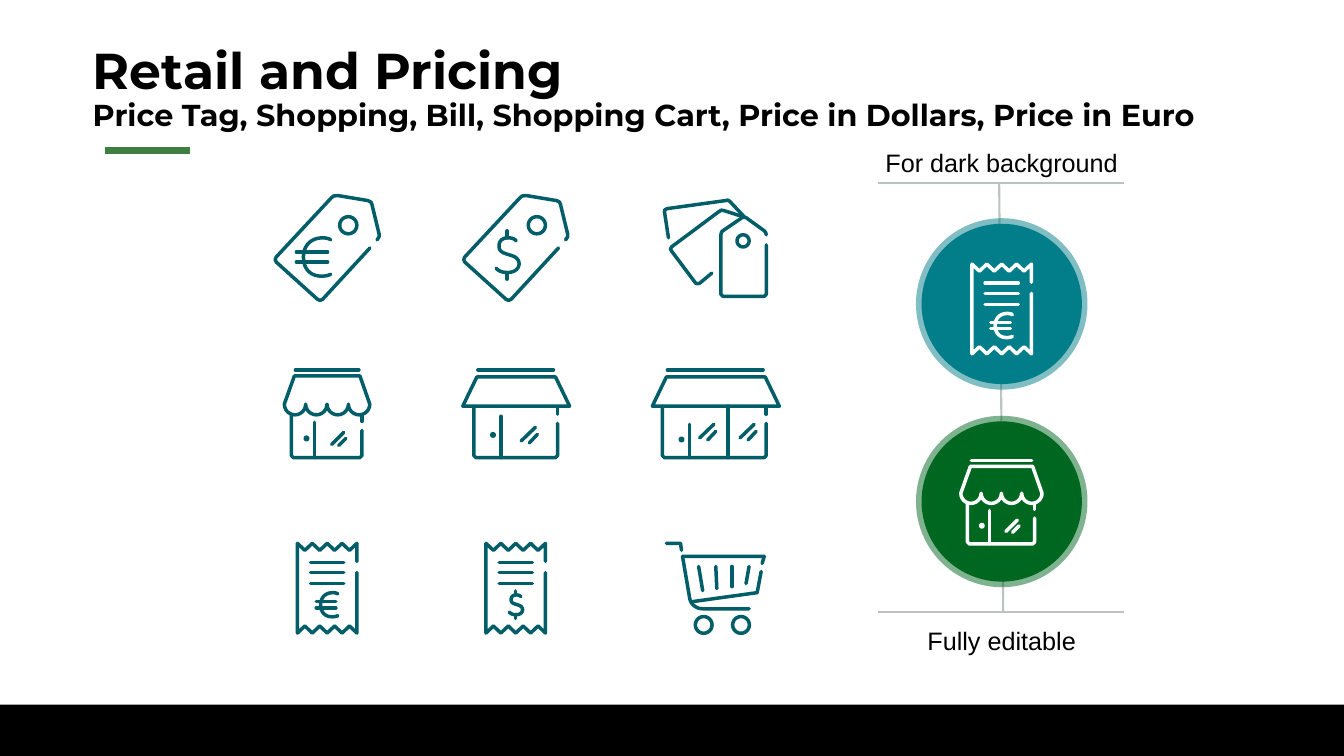
from math import cos, radians, sin

from lxml.etree import SubElement
from pptx import Presentation
from pptx.dml.color import RGBColor
from pptx.enum.shapes import MSO_CONNECTOR as Connector, MSO_SHAPE as Shape
from pptx.enum.text import MSO_ANCHOR as Anchor, PP_ALIGN as Align
from pptx.oxml.ns import qn
from pptx.util import Inches, Pt

COLORS = {
    "black": "000000",
    "white": "FFFFFF",
    "icon": "015E68",
    "accent": "3D7E41",
    "rule": "BCC4C0",
    "teal": "027E8A",
    "green": "006721",
}


# Stroke geometry, in hundredths of an inch from the icon's top left corner
def arc(x, y, radius, start=0, end=360, steps=24):
    angles = [radians(start + (end - start) * i / steps) for i in range(steps + 1)]
    return [(x + radius * cos(a), y + radius * sin(a)) for a in angles]


def circle(x, y, radius):
    points = arc(x, y, radius)
    return points[:-1] + points[:1]


def curve(start, *segments, steps=10):
    """Sample a chain of cubic curves, each given as two controls and an end."""
    points = [start]
    for first, second, end in segments:
        origin = points[-1]
        for i in range(1, steps + 1):
            t = i / steps
            weights = ((1 - t) ** 3, 3 * t * (1 - t) ** 2, 3 * t * t * (1 - t), t ** 3)
            corners = (origin, first, second, end)
            points.append(tuple(sum(w * c[axis] for w, c in zip(weights, corners))
                                for axis in (0, 1)))
    return points


def place(strokes, scale, dx, dy):
    return [[(x * scale + dx, y * scale + dy) for x, y in stroke] for stroke in strokes]


# Currency signs
EURO = [
    curve((55, 44), ((54, 43), (51, 42), (47, 42)), ((35, 42), (28, 50), (28, 61)),
          ((28, 73), (35, 80), (46, 80)), ((50, 80), (54, 79), (55, 78))),
    [(21, 56), (52, 56)],
    [(21, 66), (52, 66)],
]
DOLLAR = [
    curve((32, 72), ((36, 78), (54, 79), (55, 68)), ((55, 56), (35, 61), (35, 51)),
          ((34, 39), (50, 41), (52, 45))),
    [(43, 42), (43, 35)],
    [(43, 83), (43, 77)],
]

# Price tags
TAG = [
    [(94, 52), (47, 103), (44.5, 104), (42, 103), (1, 66), (0, 63.5), (1, 61), (56, 2),
     (58, 0.5), (62, 0), (92, 5), (95, 6.5), (96, 9), (103, 38), (103, 41), (101, 44)],
    circle(72.5, 29.5, 8.5),
]
TAG_FAN = [
    [(4, 38), (0, 12), (0.5, 10), (3, 9), (61, 1), (63, 0.5), (65, 2), (80, 18)],
    [(47, 73), (35, 83), (33, 83.5), (31, 83), (7, 51), (6, 49), (7, 47), (54, 12),
     (56.5, 10.5), (59, 11), (78, 17)],
    [(101, 35), (100.5, 33), (99, 31), (81, 18), (79, 17.5), (77, 18), (58, 31),
     (56.5, 32.5), (56, 35), (56, 94), (58, 96), (99, 96), (101, 94), (101, 45)],
    circle(78, 41, 6),
]

# Receipt with zigzag ends
TEETH = [i * 59 / 8 for i in range(9)]
RECEIPT = [
    [(59, 29)]
    + [(x, 82 if i % 2 else 89) for i, x in reversed(list(enumerate(TEETH)))]
    + [(x, 7 if i % 2 else 0) for i, x in enumerate(TEETH)]
    + [(59, 18)],
] + [[(46, y), (13, y)] for y in (19, 29, 40)]


# Shops
def shop_body(left, right, top, gap, door, door_top, knob_y):
    return [
        [(left, top), (left, 85), (left + 2, 87), (right - 2, 87), (right, 85), (right, gap + 9)],
        [(right, top + 1), (right, gap)],
        [(door, 87), (door, door_top)],
        circle(door - 8, knob_y, 1.2),
    ]


def flat_awning(width):
    return [
        [(0, 36), (14, 7), (width - 14, 7), (width, 36), (0, 36)],
        [(15, 0), (width - 16, 0)],
    ]


def glare(x, y):
    return [[(x + 14, y), (x, y + 13.5)], [(x + 16, y + 7), (x + 8, y + 15.5)]]


SCALLOPS = [point for i in range(4) for point in arc(10.6 + 21.2 * i, 34, 10.6, 180, 0, 12)]
STALL = [
    [(0, 34), *SCALLOPS, (75, 6), (10, 6), (0, 34)],
    [(11, 0), (74, 0)],
    [(59, 62), (47, 74)],
    [(61, 68), (54, 75)],
] + shop_body(7, 77, 44, 51, 30, 52, 68)
SHOP = flat_awning(106) + shop_body(11, 94, 36, 44, 38, 46, 64.5) + glare(58, 57)
WIDE_SHOP = (flat_awning(126) + shop_body(10, 113, 36, 44, 37, 54, 69)
             + glare(47, 54) + glare(87, 54) + [[(75, 36), (75, 87)]])

# Shopping cart
CART = [
    [(82, 65), *curve((36, 65), ((30, 65), (24, 61), (23, 54))), (16, 13)],
    [(15, 7), (14, 0), (0, 0)],
    [(25, 58), (90, 49), (94, 28)],
    [(95, 20), (97, 13), (16, 13)],
    circle(37, 81, 8.3),
    circle(74, 81, 8.3),
    [(36, 47), (32, 23)],
    [(49, 23), (50, 45)],
    [(65, 43), (65, 23)],
    [(82, 23), (79, 40)],
]
EURO_RECEIPT = RECEIPT + place(EURO, 0.63, 5.4, 22.5)
DOLLAR_RECEIPT = RECEIPT + place(DOLLAR, 0.57, 5, 27.3)


class Board:
    def __init__(self, deck):
        self.page = deck.slides.add_slide(deck.slide_layouts[6])
        self.shapes = self.page.shapes

    def color(self, name):
        return RGBColor.from_string(COLORS[name])

    def stroke(self, shape, color, width):
        shape.line.color.rgb = self.color(color)
        shape.line.width = Pt(width)
        return shape.element.spPr.find(qn("a:ln"))

    def line(self, x1, y1, x2, y2, color, width):
        line = self.shapes.add_connector(Connector.STRAIGHT, *map(Inches, (x1, y1, x2, y2)))
        self.stroke(line, color, width)
        SubElement(line.element.spPr, qn("a:effectLst"))

    def solid(self, kind, left, top, width, height, color):
        shape = self.shapes.add_shape(kind, *map(Inches, (left, top, width, height)))
        shape.shadow.inherit = False
        shape.fill.solid()
        shape.fill.fore_color.rgb = self.color(color)
        shape.line.fill.background()
        return shape

    def badge(self, left, top, color):
        disc = self.solid(Shape.OVAL, left, top, 1.59, 1.59, color)
        outline = self.stroke(disc, color, 8)
        SubElement(outline.find(".//" + qn("a:srgbClr")), qn("a:alpha"), val="50000")

    def text(self, left, top, width, height, lines, font, bold=False,
             align=Align.CENTER, anchor=Anchor.TOP, inset=None, spacing=None):
        box = self.shapes.add_textbox(*map(Inches, (left, top, width, height)))
        frame = box.text_frame
        frame.word_wrap, frame.vertical_anchor = True, anchor
        if inset is not None:
            frame.margin_left = frame.margin_right = Inches(inset)
            frame.margin_top = frame.margin_bottom = Inches(inset)
        para = frame.paragraphs[0]
        para.alignment, para.line_spacing = align, spacing
        for i, (words, size) in enumerate(lines):
            if i:
                para.add_line_break()
            span = para.add_run()
            span.text = words
            span.font.name, span.font.size, span.font.bold = font, Pt(size), bold
            span.font.color.rgb = self.color("black")

    def icon(self, strokes, left, top, color="icon", scale=1):
        strokes = [[(Inches(x), Inches(y)) for x, y in stroke]
                   for stroke in place(strokes, scale / 100, left, top)]
        builder = self.shapes.build_freeform(*strokes[0][0])
        for stroke in strokes:
            builder.move_to(*stroke[0])
            builder.add_line_segments(stroke[1:], close=stroke[0] == stroke[-1])
        shape = builder.convert_to_shape()
        shape.shadow.inherit = False
        shape.fill.background()
        outline = self.stroke(shape, color, 2.5)
        outline.set("cap", "rnd")
        SubElement(outline, qn("a:round"))


def main():
    deck = Presentation()
    deck.slide_width, deck.slide_height = Inches(13.33), Inches(7.5)
    board = Board(deck)

    # Footer band, title and accent
    board.solid(Shape.RECTANGLE, 0, 6.99, 13.33, 0.51, "black")
    board.line(1.04, 1.49, 1.88, 1.49, "accent", 5)
    board.text(0.92, 0.4, 11.5, 0.98,
               [("Retail and Pricing", 36),
                ("Price Tag, Shopping, Bill, Shopping Cart, Price in Dollars, Price in Euro", 21.6)],
               "Montserrat", True, Align.LEFT, Anchor.MIDDLE, 0, 0.9)

    # Icon grid
    rows = [
        (1.94, [(TAG + EURO, 2.73), (TAG + DOLLAR, 4.6)]),
        (1.98, [(TAG_FAN, 6.59)]),
        (3.67, [(STALL, 2.82), (SHOP, 4.59), (WIDE_SHOP, 6.47)]),
        (5.39, [(EURO_RECEIPT, 2.95), (DOLLAR_RECEIPT, 4.82), (CART, 6.61)]),
    ]
    for top, icons in rows:
        for strokes, left in icons:
            board.icon(strokes, left, top)

    # Badges between two rules
    board.line(9.91, 1.82, 9.95, 6.07, "rule", 1.5)
    for y in (1.82, 6.07):
        board.line(8.71, y, 11.15, y, "rule", 1.5)
    board.badge(9.14, 2.22, "teal")
    board.badge(9.14, 4.18, "green")
    board.icon(EURO_RECEIPT, 9.64, 2.62, "white")
    board.icon(STALL, 9.53, 4.57, "white", 0.95)
    board.text(8.68, 1.41, 2.51, 0.41, [("For dark background", 18)], "Arial")
    board.text(8.36, 6.15, 3.15, 0.4, [("Fully editable", 18)], "Arial")

    deck.save("out.pptx")


if __name__ == "__main__":
    main()
